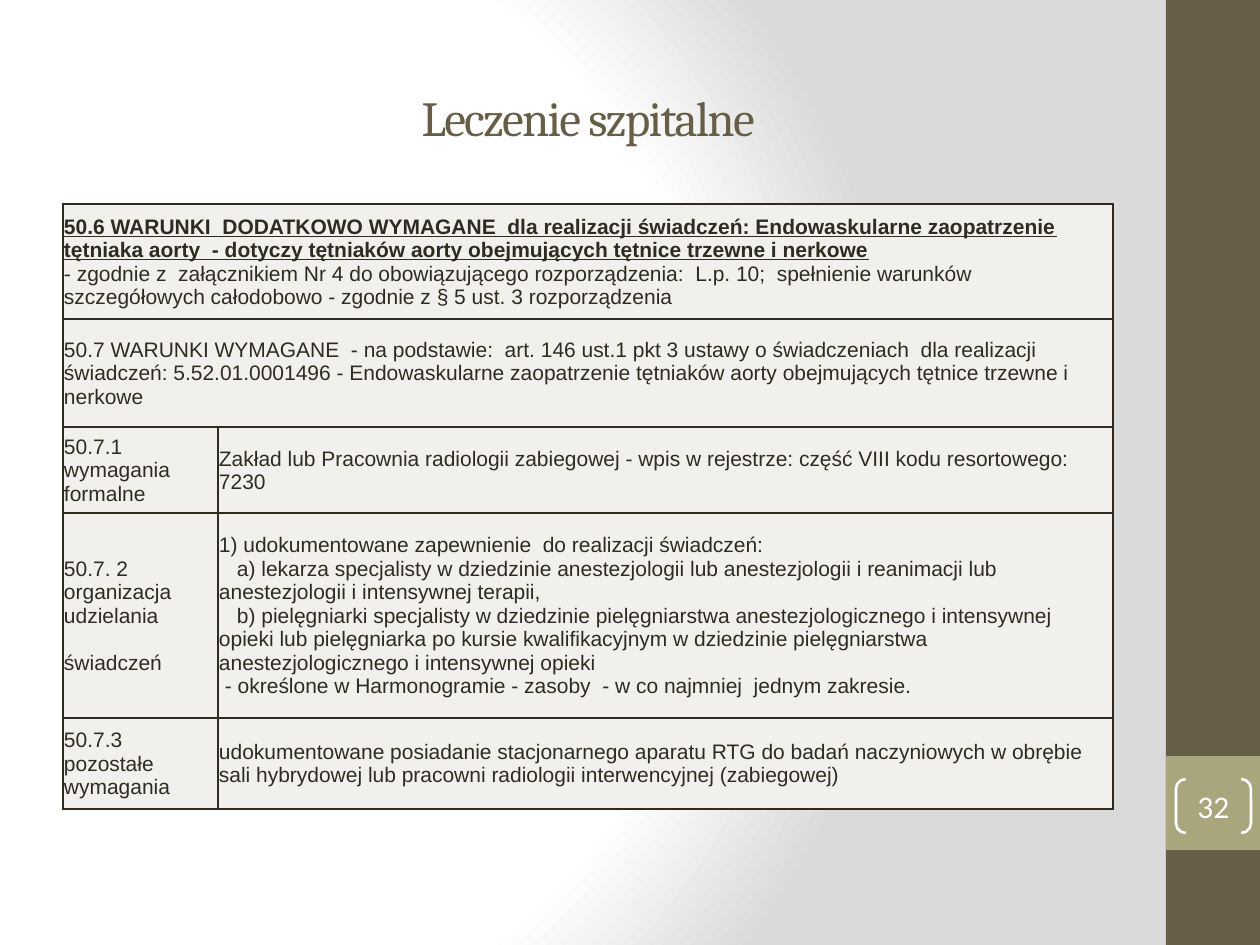
from pptx import Presentation
from pptx.dml.color import RGBColor
from pptx.enum.shapes import MSO_SHAPE as Shape
from pptx.enum.text import MSO_ANCHOR as Anchor, PP_ALIGN as Align
from pptx.oxml import parse_xml
from pptx.oxml.ns import nsdecls, qn
from pptx.util import Emu, Pt

PX = 914400 / 126
BROWN = RGBColor(0x67, 0x5E, 0x47)
OLIVE = RGBColor(0xA9, 0xA5, 0x7C)
WHITE = RGBColor(0xFF, 0xFF, 0xFF)
INK = RGBColor(0x2F, 0x2B, 0x20)
CELL = RGBColor(0xF1, 0xF0, 0xEC)


def px(value):
    return Emu(round(value * PX))


def add_run(paragraph, text, font_name, size, color):
    run = paragraph.add_run()
    run.text = text
    run.font.name = font_name
    run.font.size = Pt(size)
    run.font.color.rgb = color
    return run


presentation = Presentation()
presentation.slide_width, presentation.slide_height = px(1260), px(945)
slide = presentation.slides.add_slide(presentation.slide_layouts[6])

# Background: radial gradient from white to grey
slide.background.fill.solid()
background = slide.element.find(".//" + qn("p:bgPr"))
stops = "".join(
    f'<a:gs pos="{position * 1000}"><a:srgbClr val="{color}"/></a:gs>'
    for position, color in ((0, "FFFFFF"), (75, "FFFFFF"), (100, "DADADA"))
)
background.replace(background[0], parse_xml(
    f'<a:gradFill {nsdecls("a")} rotWithShape="1"><a:gsLst>{stops}</a:gsLst>'
    '<a:path path="circle"><a:fillToRect l="20000" t="50000" r="100000" b="50000"/></a:path>'
    '</a:gradFill>'
))

# Side bar and page number
for top, height, color in ((0, 945, BROWN), (756, 94, OLIVE)):
    bar = slide.shapes.add_shape(Shape.RECTANGLE, px(1166), px(top), px(94), px(height))
    bar.shadow.inherit = False
    bar.fill.solid()
    bar.fill.fore_color.rgb = color
    bar.line.fill.background()

brackets = slide.shapes.add_shape(Shape.DOUBLE_BRACKET, px(1176), px(779), px(75), px(54))
brackets.shadow.inherit = False
brackets.adjustments[0] = 0.18
brackets.fill.background()
brackets.line.color.rgb = WHITE
brackets.line.width = Pt(1.5)
frame = brackets.text_frame
frame.margin_left = frame.margin_right = frame.margin_top = frame.margin_bottom = 0
frame.vertical_anchor = Anchor.MIDDLE
frame.paragraphs[0].alignment = Align.CENTER
add_run(frame.paragraphs[0], "32", "Calibri", 18, WHITE)

# Title
title = slide.shapes.add_textbox(px(63), px(38), px(1050), px(157))
frame = title.text_frame
frame.word_wrap = True
frame.vertical_anchor = Anchor.MIDDLE
frame.paragraphs[0].alignment = Align.CENTER
run = add_run(frame.paragraphs[0], "Leczenie szpitalne", "Cambria", 28, BROWN)
run.font._element.set("spc", "-100")

# Requirements table: each row lists its cells, each cell its paragraphs
ROWS = [
    [["50.6 WARUNKI  DODATKOWO WYMAGANE  dla realizacji świadczeń: Endowaskularne zaopatrzenie "
      "tętniaka aorty  - dotyczy tętniaków aorty obejmujących tętnice trzewne i nerkowe",
      "- zgodnie z  załącznikiem Nr 4 do obowiązującego rozporządzenia:  L.p. 10;  spełnienie "
      "warunków szczegółowych całodobowo - zgodnie z § 5 ust. 3 rozporządzenia"]],
    [["50.7 WARUNKI WYMAGANE  - na podstawie:  art. 146 ust.1 pkt 3 ustawy o świadczeniach  dla "
      "realizacji świadczeń: 5.52.01.0001496 - Endowaskularne zaopatrzenie tętniaków aorty "
      "obejmujących tętnice trzewne i nerkowe"]],
    [["50.7.1 wymagania formalne"],
     ["Zakład lub Pracownia radiologii zabiegowej - wpis w rejestrze: część VIII kodu "
      "resortowego: 7230"]],
    [["50.7. 2 organizacja udzielania", "świadczeń"],
     ["1) udokumentowane zapewnienie  do realizacji świadczeń:",
      "a) lekarza specjalisty w dziedzinie anestezjologii lub anestezjologii i reanimacji lub "
      "anestezjologii i intensywnej terapii,",
      "b) pielęgniarki specjalisty w dziedzinie pielęgniarstwa anestezjologicznego i intensywnej "
      "opieki lub pielęgniarka po kursie kwalifikacyjnym w dziedzinie pielęgniarstwa "
      "anestezjologicznego i intensywnej opieki",
      "- określone w Harmonogramie - zasoby  - w co najmniej  jednym zakresie."]],
    [["50.7.3 pozostałe wymagania"],
     ["udokumentowane posiadanie stacjonarnego aparatu RTG do badań naczyniowych w obrębie sali "
      "hybrydowej lub pracowni radiologii interwencyjnej (zabiegowej)"]],
]
COLUMN_WIDTHS = (155, 895)
ROW_HEIGHTS = (115, 108, 86, 205, 91)
FIRST_LINE_INDENTS = {"a)": 18, "b)": 18, "- określone": 6}

table = slide.shapes.add_table(
    len(ROWS), 2, px(63), px(204), px(sum(COLUMN_WIDTHS)), px(sum(ROW_HEIGHTS))
).table
table.first_row = table.horz_banding = False
for column, width in zip(table.columns, COLUMN_WIDTHS):
    column.width = px(width)
for row, height in zip(table.rows, ROW_HEIGHTS):
    row.height = px(height)

for cell in table.iter_cells():
    properties = cell._tc.get_or_add_tcPr()
    for side in ("lnL", "lnR", "lnT", "lnB"):
        properties.append(parse_xml(
            f'<a:{side} {nsdecls("a")} w="12700"><a:solidFill><a:srgbClr val="{INK}"/>'
            f'</a:solidFill></a:{side}>'
        ))
    cell.fill.solid()
    cell.fill.fore_color.rgb = CELL
    cell.vertical_anchor = Anchor.MIDDLE
    cell.margin_left = cell.margin_right = cell.margin_top = px(1)
    cell.margin_bottom = 0

for row_index, row_cells in enumerate(ROWS):
    if len(row_cells) == 1:
        table.cell(row_index, 0).merge(table.cell(row_index, 1))
    for column_index, texts in enumerate(row_cells):
        frame = table.cell(row_index, column_index).text_frame
        for number, text in enumerate(texts):
            paragraph = frame.add_paragraph() if number else frame.paragraphs[0]
            for start, indent in FIRST_LINE_INDENTS.items():
                if text.startswith(start):
                    paragraph._p.get_or_add_pPr().set("indent", str(px(indent)))
            if text == "świadczeń":
                paragraph.space_before = Pt(13.5)
            run = add_run(paragraph, text, "Arial", 12, INK)
            run.font.bold = run.font.underline = row_index == 0 and number == 0

presentation.save("out.pptx")
